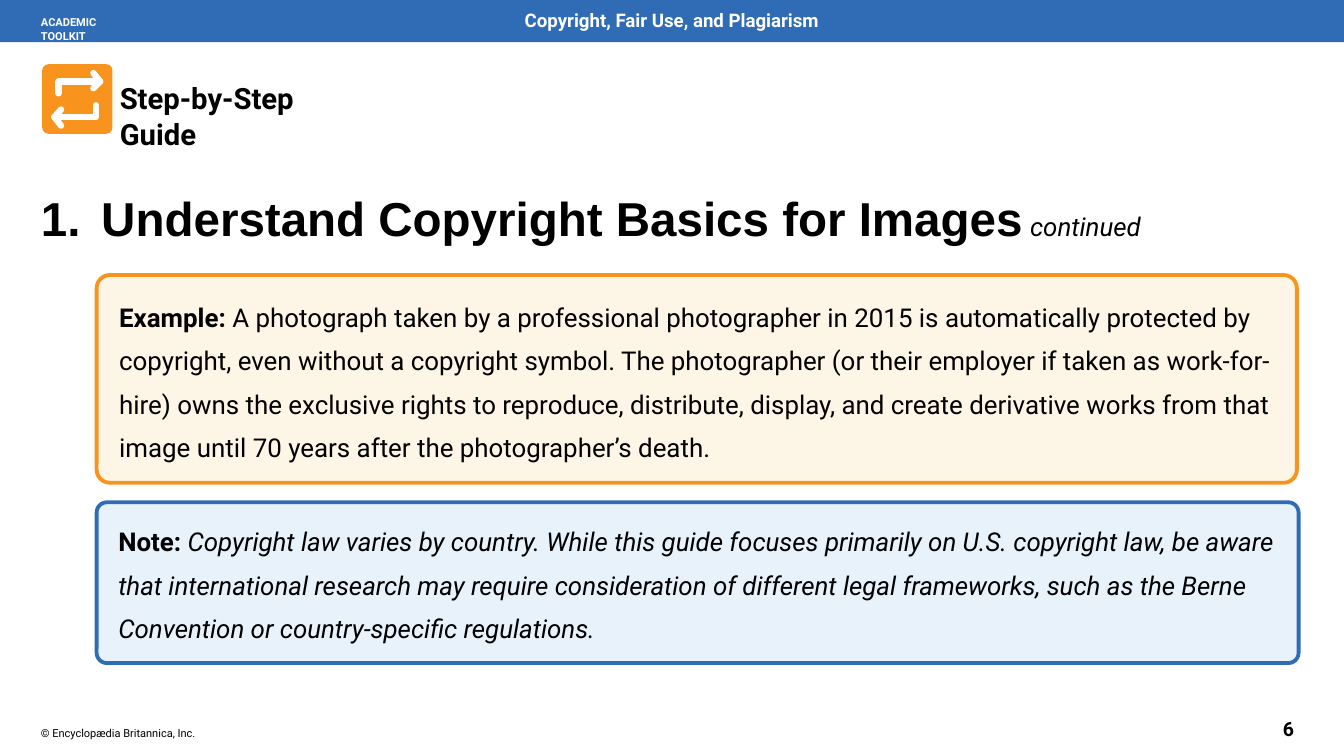
from dataclasses import dataclass
from lxml.etree import SubElement
from pptx import Presentation
from pptx.dml.color import RGBColor
from pptx.enum.shapes import MSO_SHAPE
from pptx.enum.text import MSO_ANCHOR, MSO_AUTO_SIZE, PP_ALIGN
from pptx.oxml.ns import qn
from pptx.util import Pt


@dataclass(frozen=True)
class Theme:
    blue: str = "306CB5"
    orange: str = "F8941D"
    cream: str = "FDF5E6"
    sky: str = "E8F2FB"
    black: str = "000000"
    white: str = "FFFFFF"
    title_font: str = "Arial"
    font: str = "Roboto"
    title: float = 56
    guide: float = 34.5
    body: float = 30.5
    number: float = 23
    header: float = 22
    small: float = 13


T = Theme()
W, H = 1583.28, 890.64
BAND_H = 49.7
LEFT = 48.24

TITLE = [
    ("1.\tUnderstand Copyright Basics for Images",
     dict(name=T.title_font, size=T.title, bold=True)),
    (" continued", dict(size=T.body, bold=False, italic=True)),
]
TITLE_BOX = (LEFT, 221.8, 1517, 69)
TITLE_TAB = 71

LABELS = [
    ("Copyright, Fair Use, and Plagiarism", (557.3, 9.4, 468, 28),
     dict(size=T.header, bold=True, color=T.white), PP_ALIGN.CENTER),
    ("ACADEMIC TOOLKIT", (LEFT, 17.3, 112, 32),
     dict(size=T.small, bold=True, color=T.white), PP_ALIGN.LEFT),
    ("Step-by-Step Guide", (141.1, 93.6, 290, 84),
     dict(size=T.guide, bold=True), PP_ALIGN.LEFT),
    ("6", (1511.3, 843.8, 26.6, 29.5),
     dict(size=T.number, bold=True), PP_ALIGN.LEFT),
    ("© Encyclopædia Britannica, Inc.", (LEFT, 853.9, 200, 18),
     dict(size=T.small), PP_ALIGN.LEFT),
]

CALLOUTS = [
    ("Example:",
     " A photograph taken by a professional photographer in 2015 is automatically "
     "protected by copyright, even without a copyright symbol. The photographer (or "
     "their employer if taken as work-for-hire) owns the exclusive rights to reproduce, "
     "distribute, display, and create derivative works from that image until 70 years "
     "after the photographer’s death.",
     False, (113.8, 324, 1414, 244.8), T.cream, T.orange, 12),
    ("Note:",
     " Copyright law varies by country. While this guide focuses primarily on U.S. "
     "copyright law, be aware that international research may require consideration of "
     "different legal frameworks, such as the Berne Convention or country-specific "
     "regulations.",
     True, (113.8, 591.8, 1416, 189.4), T.sky, T.blue, 9.5),
]

ICON_BOX = (49.7, 75.6, 82.8, 82)
ARROW = [
    [(-22, -7), (-22, -21), (27, -21)],
    [(19, -31), (27, -21), (19, -12.5)],
]

prs = Presentation()
prs.slide_width, prs.slide_height = Pt(W), Pt(H)
s = prs.slides.add_slide(prs.slide_layouts[5])


def pts(box):
    return [Pt(v) for v in box]


def add_run(p, text, fmt):
    r = p.add_run()
    r.text = text
    values = dict(name=T.font, color=T.black) | fmt
    r.font.color.rgb = RGBColor.from_string(values.pop("color"))
    values["size"] = Pt(values["size"])
    for key, value in values.items():
        setattr(r.font, key, value)


def set_frame(tf, left=0, top=0, right=0, bottom=0):
    frame = dict(word_wrap=True, auto_size=MSO_AUTO_SIZE.NONE,
                 vertical_anchor=MSO_ANCHOR.TOP, margin_left=Pt(left),
                 margin_top=Pt(top), margin_right=Pt(right), margin_bottom=Pt(bottom))
    for key, value in frame.items():
        setattr(tf, key, value)
    return tf.paragraphs[0]


def add_block(kind, box, fill, line=None, radius=None):
    sp = s.shapes.add_shape(kind, *pts(box))
    sp.shadow.inherit = False
    sp.fill.solid()
    sp.fill.fore_color.rgb = RGBColor.from_string(fill)
    if radius:
        sp.adjustments[0] = radius
    if line:
        sp.line.color.rgb = RGBColor.from_string(line)
        sp.line.width = Pt(4.5)
    else:
        sp.line.fill.background()
    return sp


def add_stroke(points):
    start, *rest = points
    builder = s.shapes.build_freeform(*start, scale=float(Pt(1)))
    builder.add_line_segments(rest, close=False)
    sp = builder.convert_to_shape()
    sp.shadow.inherit = False
    sp.fill.background()
    sp.line.color.rgb = RGBColor.from_string(T.white)
    sp.line.width = Pt(7.4)
    ln = sp.element.spPr.find(qn("a:ln"))
    ln.set("cap", "rnd")
    SubElement(ln, qn("a:round"))


def add_title():
    sp = s.shapes.title
    sp.left, sp.top, sp.width, sp.height = pts(TITLE_BOX)
    p = set_frame(sp.text_frame, top=0.7)
    p.alignment = PP_ALIGN.LEFT
    tabs = SubElement(p._p.get_or_add_pPr(), qn("a:tabLst"))
    SubElement(tabs, qn("a:tab"), pos=str(Pt(TITLE_TAB)), algn="l")
    for text, fmt in TITLE:
        add_run(p, text, fmt)


def add_icon():
    x, y, w, h = ICON_BOX
    add_block(MSO_SHAPE.ROUNDED_RECTANGLE, ICON_BOX, T.orange, radius=0.09)
    cx, cy = x + w / 2, y + h / 2
    for turn in (1, -1):
        for stroke in ARROW:
            add_stroke([(cx + turn * dx, cy + turn * dy) for dx, dy in stroke])


def add_labels():
    for text, box, fmt, align in LABELS:
        p = set_frame(s.shapes.add_textbox(*pts(box)).text_frame, top=1.4)
        p.alignment = align
        add_run(p, text, fmt)


def add_callouts():
    for lead, text, italic, box, fill, line, top in CALLOUTS:
        sp = add_block(MSO_SHAPE.ROUNDED_RECTANGLE, box, fill, line, 0.064)
        p = set_frame(sp.text_frame, left=22, top=top, right=16)
        p.alignment = PP_ALIGN.LEFT
        p.line_spacing = 1.4
        add_run(p, lead, dict(size=T.body, bold=True))
        add_run(p, text, dict(size=T.body, bold=False, italic=italic))


add_block(MSO_SHAPE.RECTANGLE, (0, 0, W, BAND_H), T.blue)
add_title()
add_icon()
add_labels()
add_callouts()
prs.save("out.pptx")
